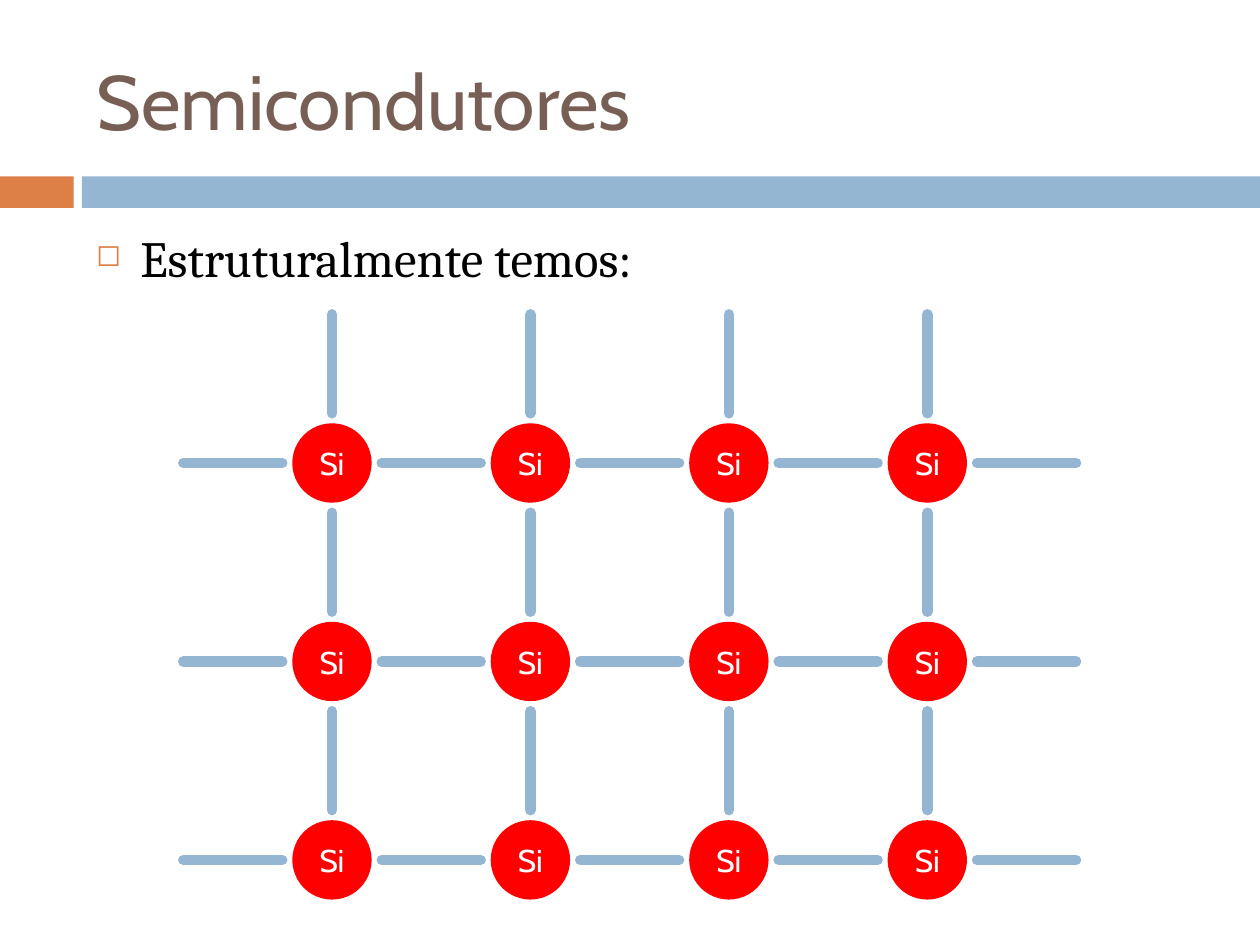
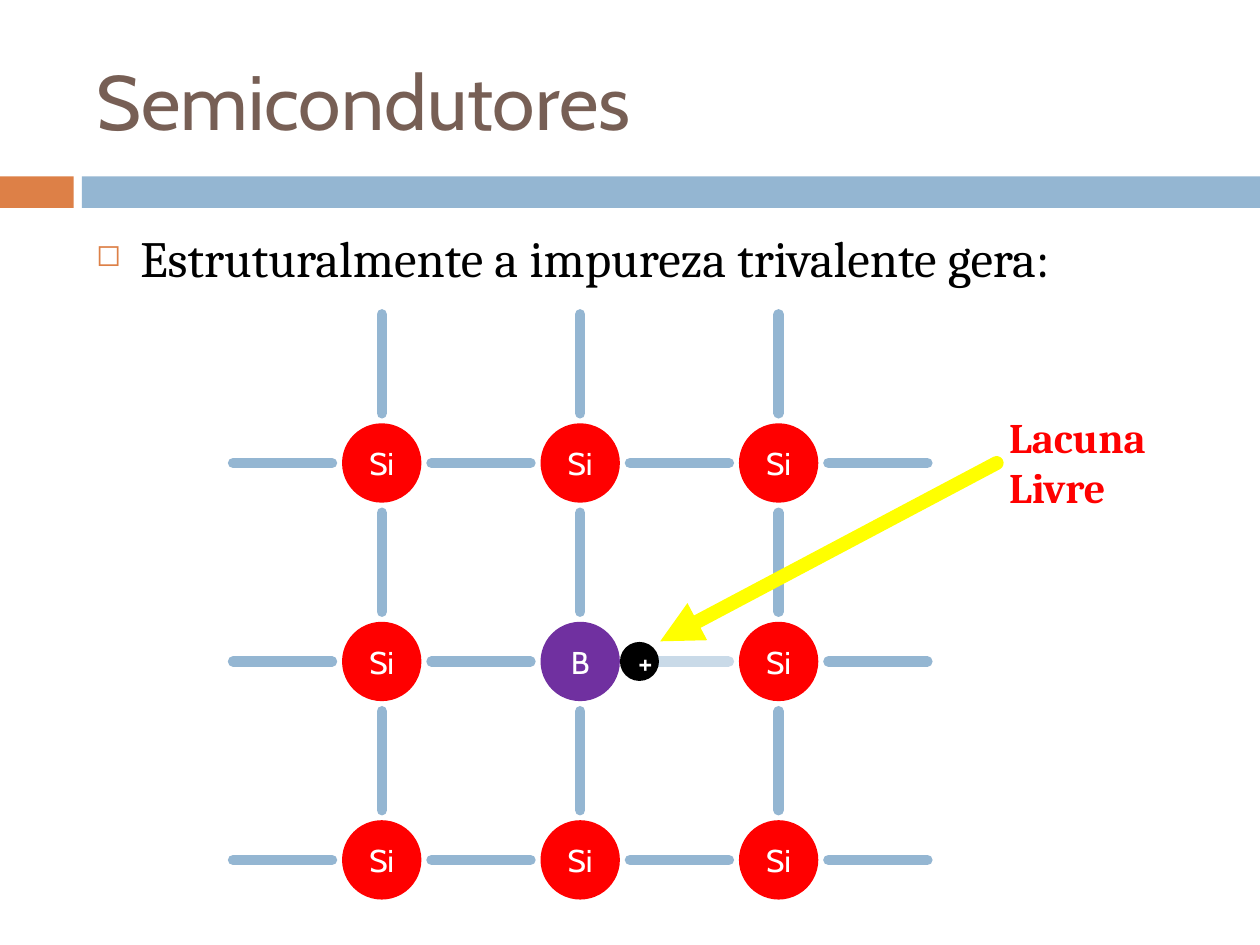
"""Builds two slides on the crystal lattice of semiconductors."""
from dataclasses import dataclass
from itertools import product
from typing import NamedTuple, Optional

from lxml.etree import SubElement as Sub
from pptx import Presentation
from pptx.dml.color import RGBColor
from pptx.enum.shapes import MSO_CONNECTOR as Link, MSO_SHAPE as Kind
from pptx.enum.text import MSO_ANCHOR as Anchor, PP_ALIGN as Align
from pptx.oxml.ns import qn
from pptx.shapes.autoshape import Shape
from pptx.shapes.connector import Connector
from pptx.slide import Slide
from pptx.util import Emu, Pt

SCALE = 914400 // 200
ORANGE = RGBColor(0xDD, 0x80, 0x47)
BLUE = RGBColor(0x94, 0xB6, 0xD2)
BROWN = RGBColor(0x77, 0x5F, 0x55)
BLACK = RGBColor(0, 0, 0)
WHITE = RGBColor(0xFF, 0xFF, 0xFF)
RED = RGBColor(0xFF, 0, 0)
PURPLE = RGBColor(0x70, 0x30, 0xA0)
YELLOW = RGBColor(0xFF, 0xFF, 0)

PITCH, ATOM, REACH, FAR = 315, 126, 79, 236
TOP, ROWS = 735, 3
HOLE = 62
INDENT = 70


class Box(NamedTuple):
    left: int
    top: int
    width: int
    height: int


class Style(NamedTuple):
    font: str
    size: int
    color: RGBColor
    bold: bool = False


@dataclass(frozen=True)
class Band:
    box: Box
    color: RGBColor


@dataclass(frozen=True)
class Lattice:
    left: int
    cols: int
    doped: Optional[tuple[int, int]] = None


HEAD = Style("Cabin", 44, BROWN)
BODY = Style("Cambria", 29, BLACK)
MARK = Style("Cabin", 18, WHITE)
NOTE = Style("Cambria", 24, RED, True)
BANDS = (
    Band(Box(0, 280, 117, 50), ORANGE),
    Band(Box(130, 280, 1870, 50), BLUE),
)


def px(count: int) -> Emu:
    """Turn px into EMU."""
    return Emu(count * SCALE)


def write(shape: Shape, lines: list[str], style: Style) -> None:
    """Fill a shape with one styled paragraph per line."""
    frame = shape.text_frame
    frame.text = "\n".join(lines)
    for para in frame.paragraphs:
        font = para.font
        font.name, font.size, font.bold = style.font, Pt(style.size), style.bold
        font.color.rgb = style.color


def add_text(slide: Slide, box: Box, lines: list[str], style: Style) -> Shape:
    """Add a wrapped text box."""
    shape = slide.shapes.add_textbox(*map(px, box))
    shape.text_frame.word_wrap = True
    write(shape, lines, style)
    return shape


def add_form(slide: Slide, kind: Kind, box: Box, color: RGBColor) -> Shape:
    """Add a flat filled shape without an outline."""
    shape = slide.shapes.add_shape(kind, *map(px, box))
    shape.shadow.inherit = False
    shape.fill.solid()
    shape.fill.fore_color.rgb = color
    shape.line.fill.background()
    return shape


def add_ball(slide: Slide, x: int, y: int, size: int, mark: str, color: RGBColor) -> None:
    """Add a marked circle centred on a point."""
    box = Box(x - size // 2, y - size // 2, size, size)
    ball = add_form(slide, Kind.OVAL, box, color)
    write(ball, [mark], MARK)
    ball.text_frame.vertical_anchor = Anchor.MIDDLE
    ball.text_frame.paragraphs[0].alignment = Align.CENTER


def add_line(slide: Slide, ends: tuple[int, int, int, int], color: RGBColor, width: int) -> Connector:
    """Add a straight line with round caps."""
    line = slide.shapes.add_connector(Link.STRAIGHT, *map(px, ends))
    line.line.color.rgb = color
    line.line.width = Pt(width)
    props = line.element.spPr
    props.find(qn("a:ln")).set("cap", "rnd")
    Sub(props, qn("a:effectLst"))
    return line


def add_bond(slide: Slide, ends: tuple[int, int, int, int], faint: bool = False) -> None:
    """Add a bond, half transparent when faint."""
    bond = add_line(slide, ends, BLUE, 6)
    if faint:
        tint = bond.element.spPr.find(".//" + qn("a:srgbClr"))
        Sub(tint, qn("a:alpha"), val="50000")


def add_grid(slide: Slide, grid: Lattice) -> None:
    """Draw the atoms, the bonds and any hole of a lattice."""
    for row, col in product(range(ROWS), range(-1, grid.cols)):
        x, y = grid.left + col * PITCH, TOP + row * PITCH
        doped = (row, col) == grid.doped
        add_bond(slide, (x + REACH, y, x + FAR, y), doped)
        if col < 0:
            continue
        add_bond(slide, (x, y - FAR, x, y - REACH))
        mark, color = ("B", PURPLE) if doped else ("Si", RED)
        add_ball(slide, x, y, ATOM, mark, color)
    if grid.doped:
        row, col = grid.doped
        x = grid.left + col * PITCH + (ATOM + HOLE) // 2
        add_ball(slide, x, TOP + row * PITCH, HOLE, "+", BLACK)


def add_note(slide: Slide) -> None:
    """Label the hole and point an arrow at it."""
    note = add_text(slide, Box(1582, 643, 270, 184), ["Lacuna", "Livre"], NOTE)
    arrow = add_line(slide, (1582, 735, 1048, 1018), YELLOW, 8)
    arrow.begin_connect(note, 1)
    Sub(arrow.element.spPr.find(qn("a:ln")), qn("a:tailEnd"), type="triangle")


def add_point(slide: Slide, text: str) -> None:
    """Add the body text with its square bullet."""
    body = add_text(slide, Box(133, 350, 1784, 1047), [text], BODY)
    para = body.text_frame.paragraphs[0]
    para.space_before = Pt(7)
    props = para._p.get_or_add_pPr()
    props.set("marL", str(px(INDENT)))
    props.set("indent", str(-px(INDENT)))
    first = props.find(qn("a:defRPr"))
    tint = Sub(props, qn("a:buClr"))
    Sub(tint, qn("a:srgbClr"), val=str(ORANGE))
    Sub(props, qn("a:buSzPct"), val="60000")
    Sub(props, qn("a:buChar"), char="◻")
    props.append(first)


def add_page(deck: Presentation, text: str, grid: Lattice) -> Slide:
    """Add a slide with bands, title, point and lattice."""
    slide = deck.slides.add_slide(deck.slide_layouts[6])
    for band in BANDS:
        add_form(slide, Kind.RECTANGLE, band.box, band.color)
    title = add_text(slide, Box(133, 50, 1784, 217), ["Semicondutores"], HEAD)
    title.text_frame.vertical_anchor = Anchor.MIDDLE
    add_point(slide, text)
    add_grid(slide, grid)
    return slide


def main() -> None:
    """Build and save the deck."""
    deck = Presentation()
    deck.slide_width, deck.slide_height = px(2000), px(1500)
    add_page(deck, "Estruturalmente temos:", Lattice(527, 4))
    trap = add_page(deck, "Estruturalmente a impureza trivalente gera:", Lattice(606, 3, (1, 1)))
    add_note(trap)
    deck.save("out.pptx")


if __name__ == "__main__":
    main()
